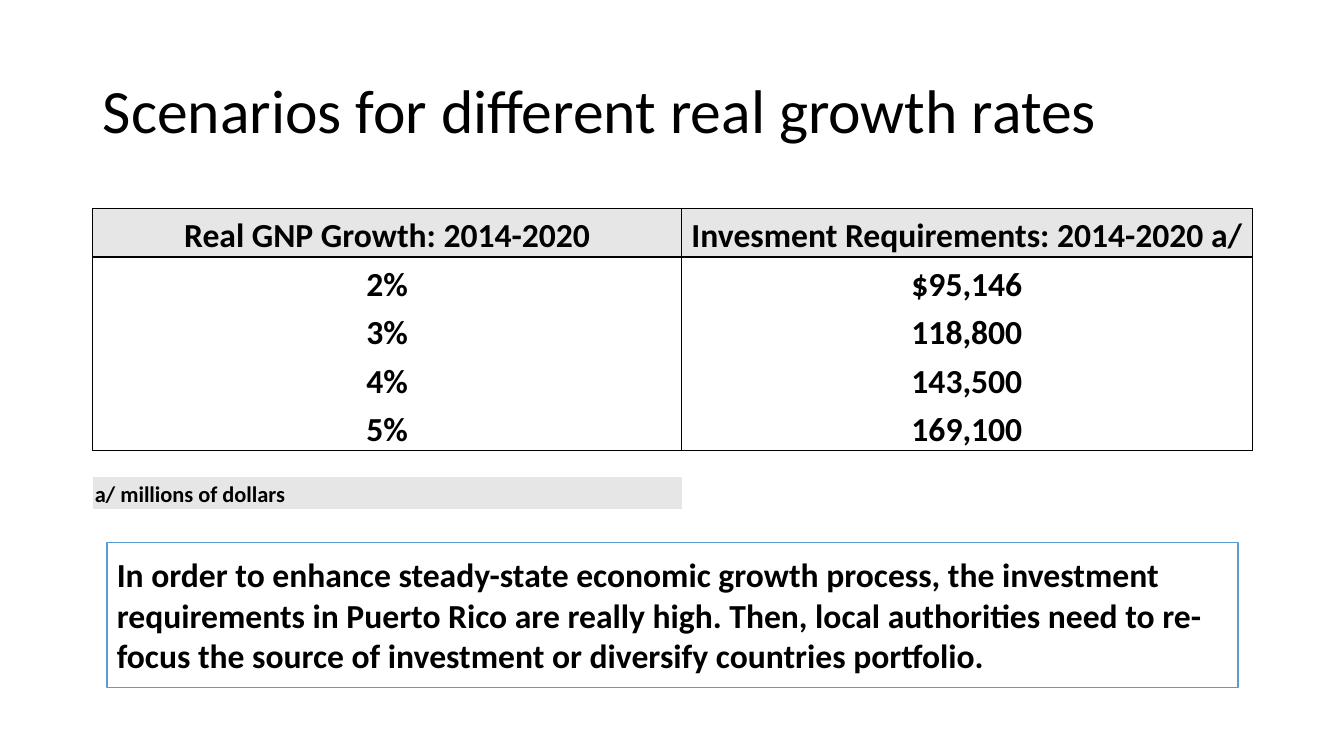
from lxml import etree
from pptx import Presentation
from pptx import util as u
from pptx.dml.color import RGBColor
from pptx.enum import shapes, text
from pptx.oxml import ns

TITLE = "Scenarios for different real growth rates"
HEAD = ("Real GNP Growth: 2014-2020", "Invesment Requirements: 2014-2020 a/")
RATES = [("2%", "$95,146"), ("3%", "118,800"), ("4%", "143,500"), ("5%", "169,100")]
NOTE = "a/ millions of dollars"
POINT = (
    "In order to enhance steady-state economic growth process, the investment "
    "requirements in Puerto Rico are really high. Then, local authorities need to "
    "re-focus the source of investment or diversify countries portfolio."
)
BLACK = RGBColor(0, 0, 0)
WHITE = RGBColor(255, 255, 255)
GRAY = RGBColor(0xE7, 0xE6, 0xE6)
BLUE = RGBColor(0x5B, 0x9B, 0xD5)
PLAIN = "{2D5ABB26-0587-4C30-8999-92F81FD0307C}"
LEFT, WIDTH = 0.92, 11.5
COLS = (5.84, 5.66)
ROW, GAP, FOOT = 0.48, 0.26, 0.32


def write(frame, words, size=24, bold=True, align=text.PP_ALIGN.LEFT,
          anchor=text.MSO_ANCHOR.MIDDLE, space=None):
    frame.word_wrap = True
    frame.vertical_anchor = anchor
    para = frame.paragraphs[0]
    para.alignment = align
    if space:
        para.line_spacing = space
    run = para.add_run()
    run.text = words
    font = run.font
    font.name, font.size, font.bold = "Calibri", u.Pt(size), bold
    font.color.rgb = BLACK


def edge(cell, sides):
    props = cell._tc.get_or_add_tcPr()
    for side in "LRTB":
        line = etree.SubElement(props, ns.qn("a:ln" + side), w=str(u.Pt(1)))
        if side in sides:
            fill = etree.SubElement(line, ns.qn("a:solidFill"))
            etree.SubElement(fill, ns.qn("a:srgbClr"), val=str(BLACK))
        else:
            etree.SubElement(line, ns.qn("a:noFill"))


def fill_cell(cell, words, sides, shade, size, align):
    cell.margin_left = cell.margin_right = u.Inches(0.02)
    cell.margin_top, cell.margin_bottom = u.Inches(0.01), 0
    cell.vertical_anchor = text.MSO_ANCHOR.BOTTOM
    edge(cell, sides)
    if shade:
        cell.fill.solid()
        cell.fill.fore_color.rgb = GRAY
    else:
        cell.fill.background()
    if words:
        write(cell.text_frame, words, size, align=align, anchor=text.MSO_ANCHOR.BOTTOM)
    else:
        para = cell.text_frame.paragraphs[0]._p
        etree.SubElement(para, ns.qn("a:endParaRPr"), sz="1200")


def add_rates(slide):
    rows = [HEAD, *RATES, ("", ""), (NOTE, "")]
    last = len(RATES)
    highs = [ROW] * (last + 1) + [GAP, FOOT]
    frame = slide.shapes.add_table(
        len(rows), len(COLS), u.Inches(LEFT), u.Inches(2.07),
        u.Inches(WIDTH), u.Inches(sum(highs)))
    table = frame.table
    table.first_row = table.horz_banding = False
    table._tbl.tblPr.find(ns.qn("a:tableStyleId")).text = PLAIN
    for col, wide in zip(table.columns, COLS):
        col.width = u.Inches(wide)
    for r, (row, high) in enumerate(zip(rows, highs)):
        table.rows[r].height = u.Inches(high)
        sides = "LR" if r <= last else ""
        sides += "T" if r in (0, 1, last + 1) else ""
        sides += "B" if r in (0, last) else ""
        foot = r > last
        align = text.PP_ALIGN.LEFT if foot else text.PP_ALIGN.CENTER
        for c, words in enumerate(row):
            shade = r == 0 or words == NOTE
            fill_cell(table.cell(r, c), words, sides, shade, 16 if foot else 24, align)


def add_point(slide):
    box = slide.shapes.add_shape(
        shapes.MSO_SHAPE.RECTANGLE, u.Inches(1.06), u.Inches(5.38),
        u.Inches(11.22), u.Inches(1.44))
    box.shadow.inherit = False
    box.fill.solid()
    box.fill.fore_color.rgb = WHITE
    box.line.color.rgb = BLUE
    box.line.width = u.Pt(1)
    write(box.text_frame, POINT)


def main():
    deck = Presentation()
    deck.slide_width, deck.slide_height = u.Inches(13.33), u.Inches(7.5)
    slide = deck.slides.add_slide(deck.slide_layouts[5])
    title = slide.shapes.title
    title.left, title.top = u.Inches(LEFT), u.Inches(0.4)
    title.width, title.height = u.Inches(WIDTH), u.Inches(1.45)
    write(title.text_frame, TITLE, 44, bold=False, space=0.9)
    add_rates(slide)
    add_point(slide)
    deck.save("out.pptx")


if __name__ == "__main__":
    main()
